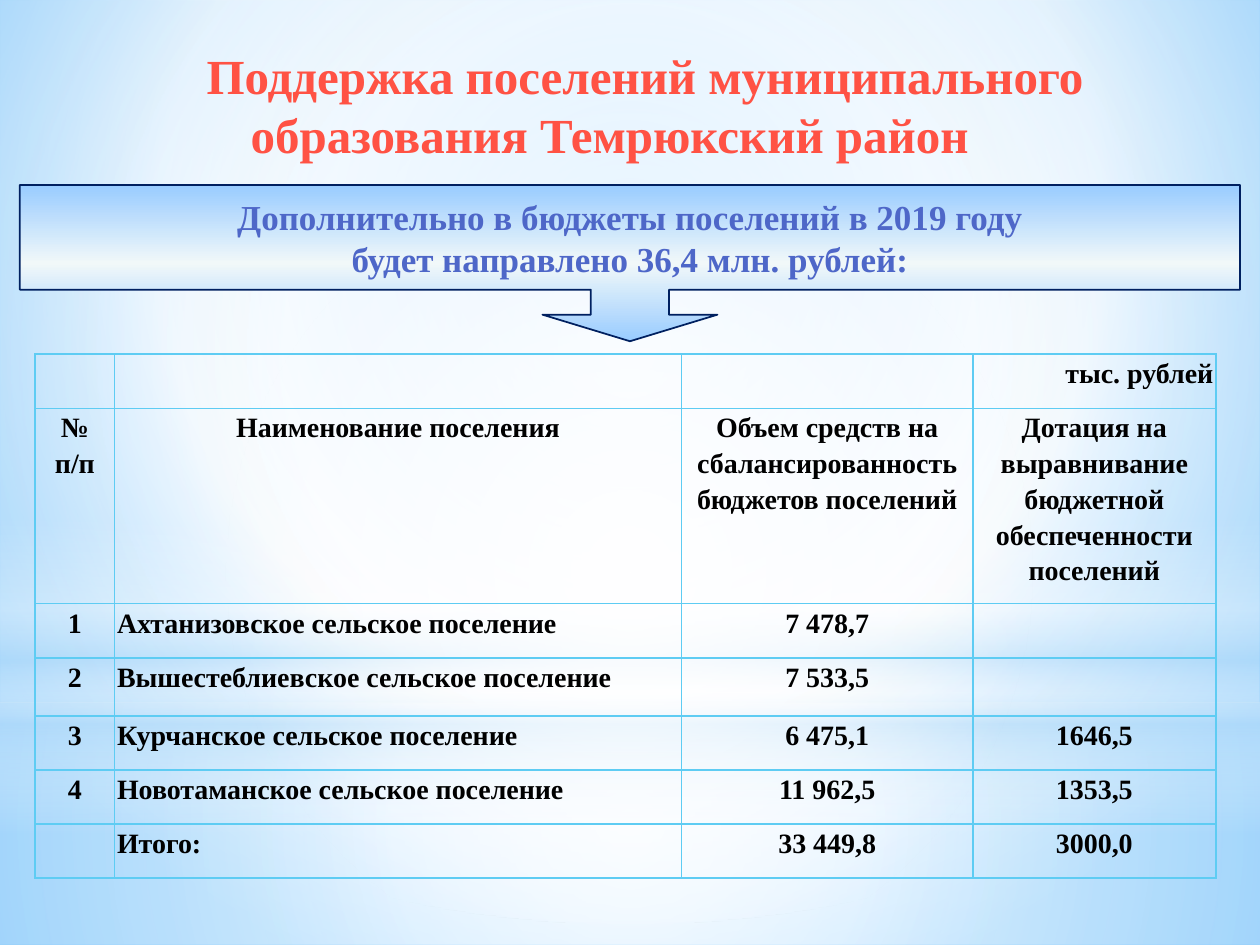
import lxml.etree
import pptx
import pptx.dml.color
import pptx.enum.shapes
import pptx.enum.text
import pptx.oxml
import pptx.oxml.ns
import pptx.util

Cm = pptx.util.Cm
Pt = pptx.util.Pt
qn = pptx.oxml.ns.qn
SHAPES = pptx.enum.shapes.MSO_SHAPE
ALIGN = pptx.enum.text.PP_ALIGN
ANCHOR = pptx.enum.text.MSO_ANCHOR

FONT = "Times New Roman"
TITLE = "Поддержка поселений муниципального образования Темрюкский район"
CALLOUT = [
    "Дополнительно в бюджеты поселений в 2019 году",
    "будет направлено 36,4 млн. рублей:",
]
ROWS = [
    ("", "", "", "тыс. рублей"),
    ("№ п/п", "Наименование поселения",
     "Объем средств на сбалансированность бюджетов поселений",
     "Дотация на выравнивание бюджетной обеспеченности поселений"),
    ("1", "Ахтанизовское сельское поселение", "7 478,7", ""),
    ("2", "Вышестеблиевское сельское поселение", "7 533,5", ""),
    ("3", "Курчанское сельское поселение", "6 475,1", "1646,5"),
    ("4", "Новотаманское сельское поселение", "11 962,5", "1353,5"),
    ("", "Итого:", "33 449,8", "3000,0"),
]
COLUMN_WIDTHS = [1.6, 11.43, 5.87, 4.9]
ROW_HEIGHTS = [1.09, 3.94, 1.09, 1.17, 1.09, 1.09, 1.09]

CENTER = (50, 50, 50, 50)
BACKGROUND_STOPS = [(0, "9ED5FF", 100), (60, "FFFFFF", 100), (100, "5BB9FF", 100)]
CALLOUT_STOPS = [(0, "99CCFF", 100), (50, "F1F8F9", 100), (100, "99CCFF", 100)]
BACKDROPS = [
    (SHAPES.RECTANGLE, 14.17, 4.88, CENTER,
     [(0, "FFFFFF", 91), (37, "FFFFFF", 76), (100, "B4DCFA", 79)]),
    (SHAPES.RECTANGLE, 0, 14.17, CENTER,
     [(0, "FFFFFF", 89), (48, "FFFFFF", 62), (100, "B4DCFA", 79)]),
    (SHAPES.RECTANGLE, 10.46, 6.35, None,
     [(0, "FFFFFF", 0), (29, "FFFFFF", 30), (45, "B4DCFA", 40),
      (55, "FFFFFF", 26), (65, "B4DCFA", 60), (100, "FFFFFF", 0)]),
    (SHAPES.OVAL, 4.45, 14.17, CENTER,
     [(0, "FFFFFF", 100), (56, "FFFFFF", 0)]),
]


def rgb(color):
    return pptx.dml.color.RGBColor.from_string(color)


def set_gradient(fill, properties, stops, focus=None):
    fill.solid()
    solid = properties.find(qn("a:solidFill"))
    gradient = lxml.etree.Element(qn("a:gradFill"), rotWithShape="1")
    stop_list = lxml.etree.SubElement(gradient, qn("a:gsLst"))
    for position, color, opacity in stops:
        stop = lxml.etree.SubElement(stop_list, qn("a:gs"), pos=str(position * 1000))
        value = lxml.etree.SubElement(stop, qn("a:srgbClr"), val=color)
        lxml.etree.SubElement(value, qn("a:alpha"), val=str(opacity * 1000))
    if focus:
        circle = lxml.etree.SubElement(gradient, qn("a:path"), path="circle")
        sides = {side: str(inset * 1000) for side, inset in zip("ltrb", focus)}
        lxml.etree.SubElement(circle, qn("a:fillToRect"), **sides)
    else:
        lxml.etree.SubElement(gradient, qn("a:lin"), ang="5400000", scaled="0")
    properties.replace(solid, gradient)


def format_paragraph(paragraph, size, color, alignment):
    paragraph.alignment = alignment
    paragraph.font.name = FONT
    paragraph.font.size = Pt(size)
    paragraph.font.bold = True
    paragraph.font.color.rgb = rgb(color)


def set_borders(cell, color):
    properties = cell._tc.get_or_add_tcPr()
    for index, name in enumerate(("a:lnL", "a:lnR", "a:lnT", "a:lnB")):
        line = lxml.etree.Element(qn(name), w=str(Pt(1)))
        fill = lxml.etree.SubElement(line, qn("a:solidFill"))
        lxml.etree.SubElement(fill, qn("a:srgbClr"), val=color)
        properties.insert(index, line)


def cell_alignment(row, column):
    if row == 0:
        return ALIGN.RIGHT
    return ALIGN.LEFT if row > 1 and column == 1 else ALIGN.CENTER


def add_backdrop(slide):
    set_gradient(slide.background.fill, slide.element.find(".//" + qn("p:bgPr")),
                 BACKGROUND_STOPS, (20, 10, 20, 60))
    for kind, top, height, focus, stops in BACKDROPS:
        shape = slide.shapes.add_shape(kind, 0, Cm(top), Cm(25.4), Cm(height))
        shape.shadow.inherit = False
        shape.line.fill.background()
        set_gradient(shape.fill, shape.element.spPr, stops, focus)


def add_title(slide):
    title = slide.shapes.title
    title.left, title.top, title.width, title.height = map(Cm, (3.91, 0.79, 20.95, 1.75))
    frame = title.text_frame
    frame.text = TITLE
    frame.word_wrap = True
    frame.auto_size = pptx.enum.text.MSO_AUTO_SIZE.NONE
    frame.vertical_anchor = ANCHOR.TOP
    paragraph = frame.paragraphs[0]
    properties = paragraph._p.get_or_add_pPr()
    properties.set("marL", str(Cm(0.89)))
    properties.set("indent", str(Cm(-0.89)))
    format_paragraph(paragraph, 28, "FF5244", ALIGN.LEFT)
    slide.shapes._spTree.append(title.element)


def add_callout(slide):
    callout = slide.shapes.add_shape(SHAPES.DOWN_ARROW_CALLOUT,
                                     Cm(0.4), Cm(3.73), Cm(24.6), Cm(3.15))
    for index, value in enumerate((0.5, 0.56, 0.17, 0.67)):
        callout.adjustments[index] = value
    callout.shadow.inherit = False
    set_gradient(callout.fill, callout.element.spPr, CALLOUT_STOPS)
    callout.line.color.rgb = rgb("002060")
    callout.line.width = Pt(1)
    frame = callout.text_frame
    frame.word_wrap = False
    frame.vertical_anchor = ANCHOR.MIDDLE
    frame.text = "\n".join(CALLOUT)
    for paragraph in frame.paragraphs:
        format_paragraph(paragraph, 20, "4E67C8", ALIGN.CENTER)


def add_subsidy_table(slide):
    table = slide.shapes.add_table(
        len(ROWS), len(COLUMN_WIDTHS), Cm(0.71), Cm(7.14),
        Cm(sum(COLUMN_WIDTHS)), Cm(sum(ROW_HEIGHTS))).table
    table.first_row = table.horz_banding = False
    for column, width in zip(table.columns, COLUMN_WIDTHS):
        column.width = Cm(width)
    for row, height in zip(table.rows, ROW_HEIGHTS):
        row.height = Cm(height)
    for row, texts in enumerate(ROWS):
        for column, text in enumerate(texts):
            cell = table.cell(row, column)
            cell.text = text
            cell.fill.background()
            cell.margin_left = cell.margin_right = Cm(0.05)
            cell.margin_top = cell.margin_bottom = 0
            set_borders(cell, "5ECCF3")
            paragraph = cell.text_frame.paragraphs[0]
            paragraph.line_spacing = 1.15
            format_paragraph(paragraph, 16, "000000", cell_alignment(row, column))


def main():
    presentation = pptx.Presentation()
    presentation.slide_width = Cm(25.4)
    presentation.slide_height = Cm(19.05)
    slide = presentation.slides.add_slide(presentation.slide_layouts[5])
    add_backdrop(slide)
    add_title(slide)
    add_callout(slide)
    add_subsidy_table(slide)
    presentation.save("out.pptx")


if __name__ == "__main__":
    main()
